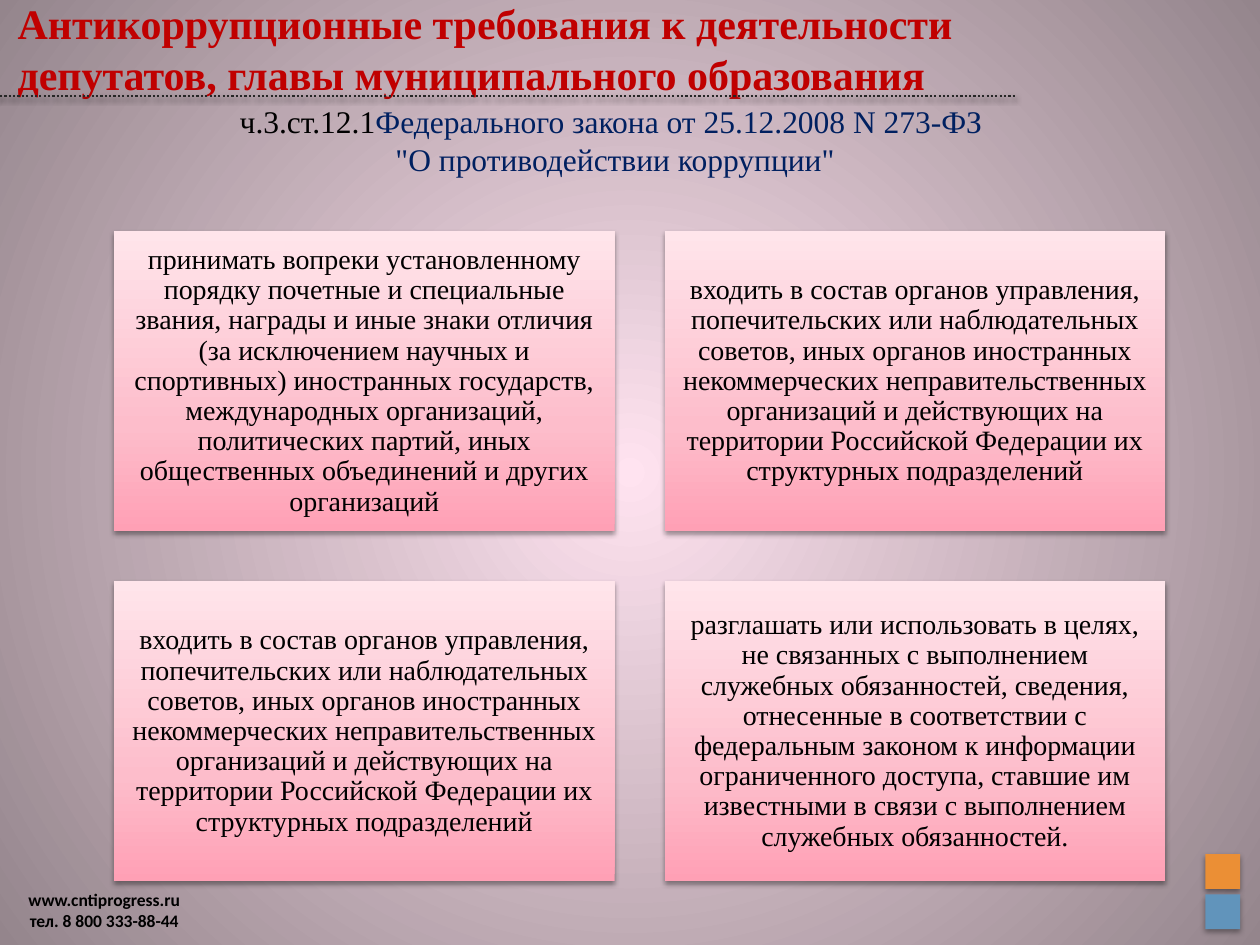
from lxml.etree import SubElement
from pptx import Presentation
from pptx.dml.color import RGBColor
from pptx.enum.dml import MSO_LINE
from pptx.enum.shapes import MSO_CONNECTOR, MSO_SHAPE
from pptx.enum.text import MSO_ANCHOR as Anchor, MSO_AUTO_SIZE as AutoSize, PP_ALIGN as Align
from pptx.oxml import parse_xml
from pptx.oxml.ns import nsdecls, qn
from pptx.util import Cm, Pt

BODIES = (
    "входить в состав органов управления, попечительских или наблюдательных советов, "
    "иных органов иностранных некоммерческих неправительственных организаций и действующих "
    "на территории Российской Федерации их структурных подразделений"
)
PROHIBITIONS = [
    "принимать вопреки установленному порядку почетные и специальные звания, награды и иные "
    "знаки отличия (за исключением научных и спортивных) иностранных государств, международных "
    "организаций, политических партий, иных общественных объединений и других организаций",
    BODIES,
    BODIES,
    "разглашать или использовать в целях, не связанных с выполнением служебных обязанностей, "
    "сведения, отнесенные в соответствии с федеральным законом к информации ограниченного "
    "доступа, ставшие им известными в связи с выполнением служебных обязанностей.",
]


def rgb(hex_color):
    return RGBColor.from_string(hex_color)


def use_gradient(properties, stops, direction):
    """Replace the solid fill of a properties element by a gradient."""
    stop_xml = "".join(
        f'<a:gs pos="{position * 1000}"><a:srgbClr val="{color}"/></a:gs>'
        for position, color in stops
    )
    gradient = parse_xml(
        f'<a:gradFill {nsdecls("a")} rotWithShape="1"><a:gsLst>{stop_xml}</a:gsLst>'
        f"{direction}</a:gradFill>"
    )
    properties.replace(properties.find(qn("a:solidFill")), gradient)


def add_shadow(shape, opacity=38, distance=1.6):
    properties = shape._element.spPr
    for old in properties.findall(qn("a:effectLst")):
        properties.remove(old)
    effects = SubElement(properties, qn("a:effectLst"))
    effects.append(parse_xml(
        f'<a:outerShdw {nsdecls("a")} blurRad="{Pt(3.1)}" dist="{Pt(distance)}" dir="5400000" '
        f'rotWithShape="0"><a:srgbClr val="000000"><a:alpha val="{opacity * 1000}"/>'
        "</a:srgbClr></a:outerShdw>"
    ))


def write(frame, paragraphs, size, color="000000", font="Times New Roman", bold=False,
          align=Align.CENTER, anchor=Anchor.TOP, spacing=None, inset=None):
    """Fill a text frame; each paragraph is a list of (text, colour or None) runs."""
    frame.word_wrap = True
    frame.auto_size = AutoSize.NONE
    frame.vertical_anchor = anchor
    if inset is not None:
        frame.margin_left = frame.margin_right = inset
        frame.margin_top = frame.margin_bottom = inset
    for number, runs in enumerate(paragraphs):
        paragraph = frame.add_paragraph() if number else frame.paragraphs[0]
        paragraph.alignment = align
        if spacing:
            paragraph.line_spacing = spacing
        for text, run_color in runs:
            run = paragraph.add_run()
            run.text = text
            run.font.name, run.font.size, run.font.bold = font, Pt(size), bold
            run.font.color.rgb = rgb(run_color or color)


class RequirementsSlide:
    accent, navy = "C00000", "002060"
    card_stops = [(0, "FFA0B5"), (35, "FDBDCB"), (100, "FFE5EB")]
    backdrop_stops = [(0, "FFE3F0"), (100, "94858C")]

    def __init__(self, deck):
        self.slide = deck.slides.add_slide(deck.slide_layouts[5])
        self.shapes = self.slide.shapes

    def backdrop(self):
        self.slide.background.fill.solid()
        use_gradient(
            self.slide._element.find(".//" + qn("p:bgPr")), self.backdrop_stops,
            '<a:path path="circle"><a:fillToRect l="50000" t="50000" r="50000" b="50000"/></a:path>',
        )

    def title(self, text, left, top, width, height):
        heading = self.shapes.title
        heading.left, heading.top, heading.width, heading.height = left, top, width, height
        write(heading.text_frame, [[(text, None)]], 24, self.accent, bold=True,
              align=Align.LEFT, anchor=Anchor.MIDDLE)

    def rectangle(self, left, top, width, height, color, **shadow):
        block = self.shapes.add_shape(MSO_SHAPE.RECTANGLE, left, top, width, height)
        block.fill.solid()
        block.fill.fore_color.rgb = rgb(color)
        block.line.fill.background()
        add_shadow(block, **shadow)
        return block

    def card(self, text, left, top, width, height):
        block = self.rectangle(left, top, width, height, self.card_stops[0][1])
        use_gradient(block._element.spPr, self.card_stops, '<a:lin ang="16200000" scaled="0"/>')
        write(block.text_frame, [[(text, None)]], 16, anchor=Anchor.MIDDLE,
              spacing=0.9, inset=Cm(0.18))

    def dotted_rule(self, top, width):
        rule = self.shapes.add_connector(MSO_CONNECTOR.STRAIGHT, 0, top, width, top)
        rule.line.color.rgb = rgb("262626")
        rule.line.width = Pt(1.25)
        rule.line.dash_style = MSO_LINE.ROUND_DOT
        add_shadow(rule)

    def caption(self, paragraphs, left, top, width, height, size, **style):
        box = self.shapes.add_textbox(left, top, width, height)
        write(box.text_frame, paragraphs, size, **style)


def main():
    deck = Presentation()
    deck.slide_width, deck.slide_height = Cm(25.4), Cm(19.05)
    page = RequirementsSlide(deck)
    page.backdrop()

    page.rectangle(Cm(24.3), Cm(17.22), Cm(0.7), Cm(0.7), "EB8F35", opacity=40, distance=1.8)
    page.dotted_rule(Cm(1.94), Cm(20.5))
    page.rectangle(Cm(24.3), Cm(18.03), Cm(0.7), Cm(0.7), "6194BB", opacity=35, distance=1.8)
    page.caption([[("www.cntiprogress.ru", None)], [("тел. 8 800 333-88-44", None)]],
                 Cm(-1.3), Cm(17.8), Cm(6.8), Cm(1.11), 10, font="Calibri", bold=True)

    page.title("Антикоррупционные требования к деятельности депутатов, "
               "главы муниципального образования", Cm(0.1), 0, Cm(20.5), Cm(1.94))

    card_width, card_height, gap = 10.09, 6.05, 1.01
    for number, prohibition in enumerate(PROHIBITIONS):
        row, column = divmod(number, 2)
        page.card(prohibition, Cm(2.3 + column * (card_width + gap)),
                  Cm(4.66 + row * (card_height + gap)), Cm(card_width), Cm(card_height))

    page.caption([[("ч.3.ст.12.1", None),
                   ("Федерального закона от 25.12.2008 N 273-ФЗ ", page.navy)],
                  [('"О противодействии коррупции"', page.navy)]],
                 Cm(4.3), Cm(1.94), Cm(16.2), Cm(1.8), 18)
    deck.save("out.pptx")


if __name__ == "__main__":
    main()
